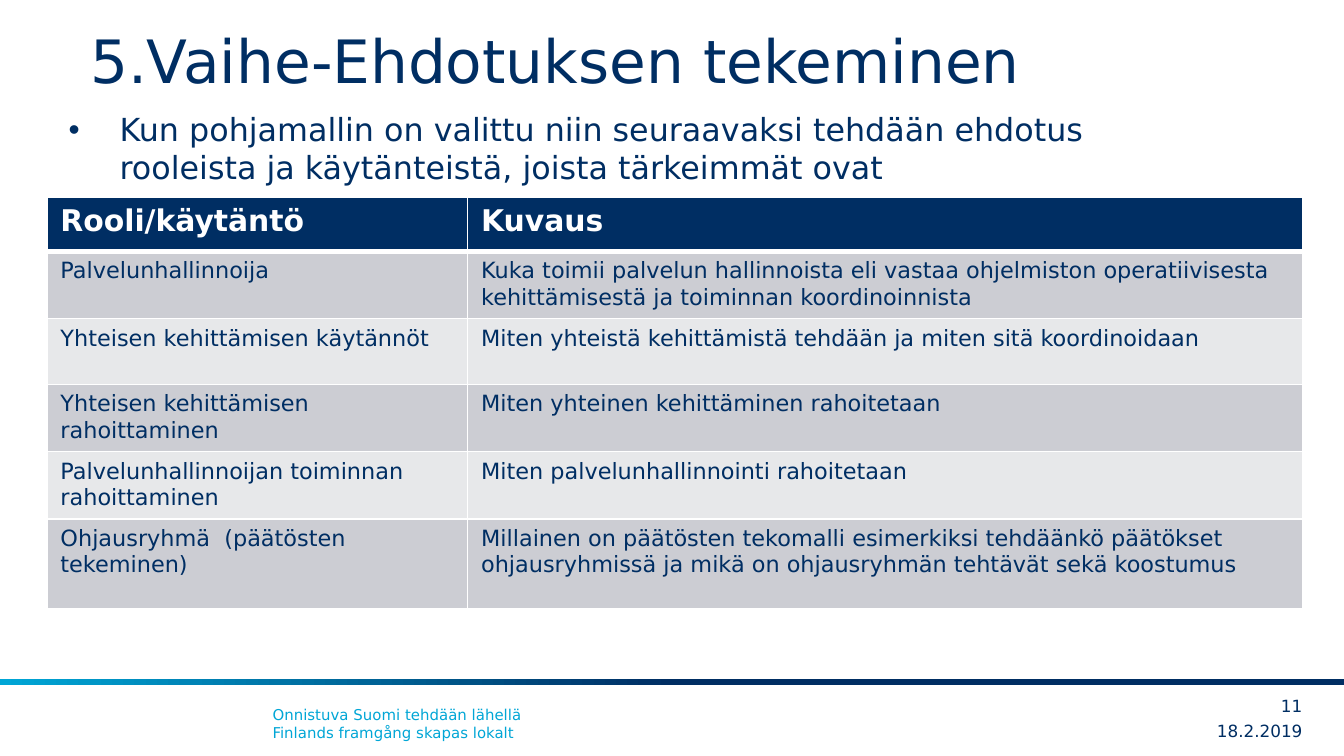
from pptx import Presentation
from pptx.dml.color import RGBColor
from pptx.enum.shapes import MSO_SHAPE
from pptx.enum.text import MSO_ANCHOR, PP_ALIGN
from pptx.oxml.ns import qn
from pptx.util import Inches, Pt
from lxml.etree import SubElement

COLORS = {
    "navy": "002E63",
    "cyan": "00A6D6",
    "white": "FFFFFF",
    "dark band": "CCCDD3",
    "light band": "E7E8EA",
}
ROLES = [
    ("Rooli/käytäntö", "Kuvaus"),
    ("Palvelunhallinnoija",
     "Kuka toimii palvelun hallinnoista eli vastaa ohjelmiston operatiivisesta "
     "kehittämisestä ja toiminnan koordinoinnista"),
    ("Yhteisen kehittämisen käytännöt",
     "Miten yhteistä kehittämistä tehdään ja miten sitä koordinoidaan"),
    ("Yhteisen kehittämisen rahoittaminen",
     "Miten yhteinen kehittäminen rahoitetaan"),
    ("Palvelunhallinnoijan toiminnan rahoittaminen",
     "Miten palvelunhallinnointi rahoitetaan"),
    ("Ohjausryhmä  (päätösten tekeminen)",
     "Millainen on päätösten tekomalli esimerkiksi tehdäänkö päätökset "
     "ohjausryhmissä ja mikä on ohjausryhmän tehtävät sekä koostumus"),
]
COLUMN_WIDTHS = [3.13, 6.21]
ROW_HEIGHTS = [0.4] + [0.49] * 4 + [0.67]


def rgb(name):
    return RGBColor.from_string(COLORS[name])


def write(frame, text, size, font="DejaVu Sans", color="navy", bold=False,
          align=PP_ALIGN.LEFT, bullet=None, indent=0.38):
    """Fill a text frame with one paragraph; a vertical tab breaks the line."""
    frame.text = text
    paragraph = frame.paragraphs[0]
    paragraph.alignment = align
    if bullet:
        properties = paragraph._p.get_or_add_pPr()
        properties.set("marL", str(Inches(indent)))
        properties.set("indent", str(-Inches(indent)))
        SubElement(properties, qn("a:buFont"), typeface="Arial")
        SubElement(properties, qn("a:buChar"), char=bullet)
    for line_break in paragraph._p.findall(qn("a:br")):
        SubElement(line_break, qn("a:rPr"), sz=str(size * 100))
    for run in paragraph.runs:
        run.font.name = font
        run.font.size = Pt(size)
        run.font.bold = bold
        run.font.color.rgb = rgb(color)


def add_borders(cell, bottom):
    properties = cell._tc.get_or_add_tcPr()
    widths = {"a:lnL": 1, "a:lnR": 1, "a:lnT": 1, "a:lnB": bottom}
    for position, (side, width) in enumerate(widths.items()):
        line = SubElement(properties, qn(side), w=str(Pt(width)))
        fill = SubElement(line, qn("a:solidFill"))
        SubElement(fill, qn("a:srgbClr"), val=COLORS["white"])
        properties.insert(position, line)


class SlideBuilder:
    def __init__(self, slide):
        self.slide = slide

    def text(self, box, text, size, anchor=MSO_ANCHOR.TOP, insets=(0, 0.05), **style):
        frame = self.slide.shapes.add_textbox(*map(Inches, box)).text_frame
        frame.word_wrap = True
        frame.vertical_anchor = anchor
        frame.margin_left = frame.margin_right = Inches(insets[0])
        frame.margin_top = frame.margin_bottom = Inches(insets[1])
        write(frame, text, size, **style)

    def gradient_bar(self, box, stops, angle):
        bar = self.slide.shapes.add_shape(MSO_SHAPE.RECTANGLE, *map(Inches, box))
        bar.shadow.inherit = False
        bar.line.fill.background()
        bar.fill.gradient()
        bar.fill.gradient_angle = angle
        for stop, (position, color) in zip(bar.fill.gradient_stops, stops):
            stop.position = position
            stop.color.rgb = rgb(color)

    def table(self, left, top, widths, heights, rows):
        size = map(Inches, (left, top, sum(widths), sum(heights)))
        table = self.slide.shapes.add_table(len(rows), len(widths), *size).table
        for column, width in zip(table.columns, widths):
            column.width = Inches(width)
        for index, (row, height, texts) in enumerate(zip(table.rows, heights, rows)):
            row.height = Inches(height)
            header = index == 0
            band = "navy" if header else "dark band" if index % 2 else "light band"
            for cell, text in zip(row.cells, texts):
                cell.fill.solid()
                cell.fill.fore_color.rgb = rgb(band)
                add_borders(cell, bottom=3 if header else 1)
                write(cell.text_frame, text, 16 if header else 12, bold=header,
                      color="white" if header else "navy")


def main():
    presentation = Presentation()
    presentation.slide_width = Inches(10)
    presentation.slide_height = presentation.slide_width * 9 // 16
    builder = SlideBuilder(presentation.slides.add_slide(presentation.slide_layouts[6]))

    builder.gradient_bar((0, 5.05, 10, 0.05), [(0.5, "navy"), (1, "cyan")], angle=180)
    builder.text((1.93, 5.2, 6.54, 0.37),
                 "Onnistuva Suomi tehdään lähellä\vFinlands framgång skapas lokalt",
                 8, color="cyan", insets=(0.1, 0.05))
    builder.text((0.67, 0.06, 8.51, 0.7), "5.Vaihe-Ehdotuksen tekeminen", 32,
                 anchor=MSO_ANCHOR.BOTTOM)
    builder.text((0.51, 0.77, 8.51, 3.71),
                 "Kun pohjamallin on valittu niin seuraavaksi tehdään ehdotus "
                 "rooleista ja käytänteistä, joista tärkeimmät ovat",
                 17, bullet="•")
    for box, label in [((8.7, 5.33, 0.99, 0.22), "18.2.2019"),
                       ((9.26, 5.14, 0.43, 0.22), "11")]:
        builder.text(box, label, 9, anchor=MSO_ANCHOR.MIDDLE, insets=(0, 0),
                     align=PP_ALIGN.RIGHT)
    builder.table(0.35, 1.47, COLUMN_WIDTHS, ROW_HEIGHTS, ROLES)

    presentation.save("out.pptx")


if __name__ == "__main__":
    main()
